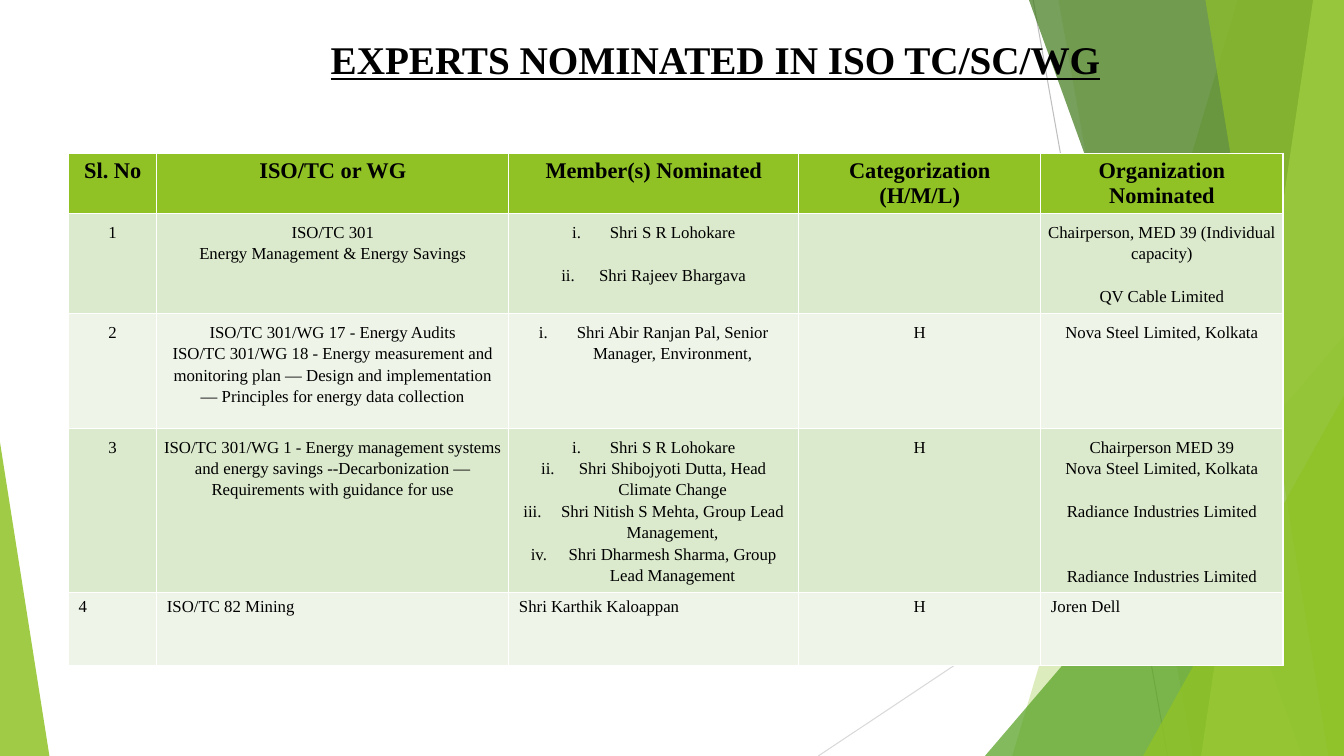
from pptx import Presentation
from pptx.dml.color import RGBColor
from pptx.enum.shapes import MSO_CONNECTOR, MSO_SHAPE
from pptx.enum.text import MSO_ANCHOR, PP_ALIGN
from pptx.oxml.ns import qn
from pptx.util import Pt
from lxml.etree import SubElement

WIDTH, HEIGHT = 960, 540
LINE = 15.4


def paint(fill, color, opacity=100):
    fill.solid()
    fill.fore_color.rgb = RGBColor.from_string(color)
    if opacity < 100:
        tint = fill._xPr.find(f".//{qn('a:srgbClr')}")
        SubElement(tint, qn("a:alpha"), val=str(opacity * 1000))


def style(para, size, bold=False):
    para.font.name = "Times New Roman"
    para.font.size = Pt(size)
    para.font.bold = bold
    paint(para.font.fill, "000000")


deck = Presentation()
deck.slide_width, deck.slide_height = Pt(WIDTH), Pt(HEIGHT)
page = deck.slides.add_slide(deck.slide_layouts[5])

for x1, y1, x2, y2, color in [
    (738, 0, 834, HEIGHT, "BFBFBF"),
    (WIDTH, 290, 584.5, HEIGHT, "D9D9D9"),
]:
    ray = page.shapes.add_connector(
        MSO_CONNECTOR.STRAIGHT, Pt(x1), Pt(y1), Pt(x2), Pt(y2))
    ray.line.width = Pt(0.75)
    paint(ray.line.fill, color)
    SubElement(ray._element.spPr, qn("a:effectLst"))

facets = [
    ("band", 884, 723, "90C226", 30),
    ("band", 756, 852, "90C226", 20),
    ("triangle", (703.5, 240, 256.5, 300), 1, "54A021", 72),
    ("band", 735, 930, "3F7819", 70),
    ("band", 938, 858, "C0E474", 70),
    ("band", 861, 949, "90C226", 65),
    ("triangle", (816.5, 283, 143.5, 257), 1, "90C226", 80),
    ("triangle", (0, 316, 35.3, 224), 0, "90C226", 85),
]
for kind, start, end, color, opacity in facets:
    if kind == "band":
        outline = page.shapes.build_freeform(Pt(start), 0)
        outline.add_line_segments([
            (Pt(WIDTH), 0), (Pt(WIDTH), Pt(HEIGHT)), (Pt(end), Pt(HEIGHT))])
        facet = outline.convert_to_shape()
    else:
        facet = page.shapes.add_shape(
            MSO_SHAPE.ISOSCELES_TRIANGLE, *[Pt(length) for length in start])
        facet.adjustments[0] = end
    facet.shadow.inherit = False
    facet.line.fill.background()
    paint(facet.fill, color, opacity)

title = page.shapes.title
title.element.getparent().append(title.element)
title.left, title.top, title.width, title.height = Pt(35), Pt(21.6), Pt(952), Pt(78)
title.text_frame.text = "EXPERTS NOMINATED IN ISO TC/SC/WG"
title.text_frame.vertical_anchor = MSO_ANCHOR.TOP
heading = title.text_frame.paragraphs[0]
heading.alignment = PP_ALIGN.CENTER
style(heading, 28, True)
heading.font.underline = True

headers = ["Sl. No", "ISO/TC or WG", "Member(s) Nominated",
           "Categorization (H/M/L)", "Organization Nominated"]
rows = [
    ["1", "ISO/TC 301\nEnergy Management & Energy Savings",
     "Shri S R Lohokare\nShri Rajeev Bhargava", "",
     "Chairperson, MED 39 (Individual capacity)\nQV Cable Limited"],
    ["2", "ISO/TC 301/WG 17 - Energy Audits\n"
     "ISO/TC 301/WG 18 - Energy measurement and monitoring plan — "
     "Design and implementation — Principles for energy data collection",
     "Shri Abir Ranjan Pal, Senior Manager, Environment,", "H",
     "Nova Steel Limited, Kolkata"],
    ["3", "ISO/TC 301/WG 1 - Energy management systems and energy savings "
     "--Decarbonization — Requirements with guidance for use",
     "Shri S R Lohokare\nShri Shibojyoti Dutta, Head Climate Change\n"
     "Shri Nitish S Mehta, Group Lead Management,\n"
     "Shri Dharmesh Sharma, Group Lead Management", "H",
     "Chairperson MED 39\nNova Steel Limited, Kolkata\n"
     "Radiance Industries Limited\nRadiance Industries Limited"],
    ["4", "ISO/TC 82 Mining", "Shri Karthik Kaloappan", "H", "Joren Dell"],
]
blank_lines = {(1, 2, 1): 1, (1, 4, 1): 1, (3, 4, 2): 1, (3, 4, 3): 2}
column_widths = [63, 251.5, 207, 173, 173]
row_heights = [43, 71.5, 82, 116.5, 52]

frame = page.shapes.add_table(
    len(row_heights), len(column_widths), Pt(49), Pt(109.5),
    Pt(sum(column_widths)), Pt(sum(row_heights)))
table = frame.table
for column, width in zip(table.columns, column_widths):
    column.width = Pt(width)
for row, height in zip(table.rows, row_heights):
    row.height = Pt(height)

for r, texts in enumerate([headers] + rows):
    for c, text in enumerate(texts):
        cell = table.cell(r, c)
        paint(cell.fill, "90C226" if r == 0 else "DBE9CD" if r % 2 else "EEF4E8")
        cell.text = text
        spaced = 1 <= r <= 3
        if spaced:
            cell.margin_left = cell.margin_right = Pt(5)
            cell.margin_top = cell.margin_bottom = Pt(5)
        for n, para in enumerate(cell.text_frame.paragraphs):
            style(para, 12 if r else 16, r == 0)
            centred = r < 4 or c == 3
            para.alignment = PP_ALIGN.CENTER if centred else PP_ALIGN.LEFT
            if spaced:
                para.line_spacing = 1.15
            if (r, c, n) in blank_lines:
                para.space_before = Pt(LINE * blank_lines[r, c, n])
            if spaced and c == 2:
                properties = para._p.get_or_add_pPr()
                properties.set("marL", str(Pt(27)))
                properties.set("indent", str(-Pt(27)))
                numbering = properties.makeelement(
                    qn("a:buAutoNum"), {"type": "romanLcPeriod"})
                properties.find(qn("a:defRPr")).addprevious(numbering)

deck.save("out.pptx")
